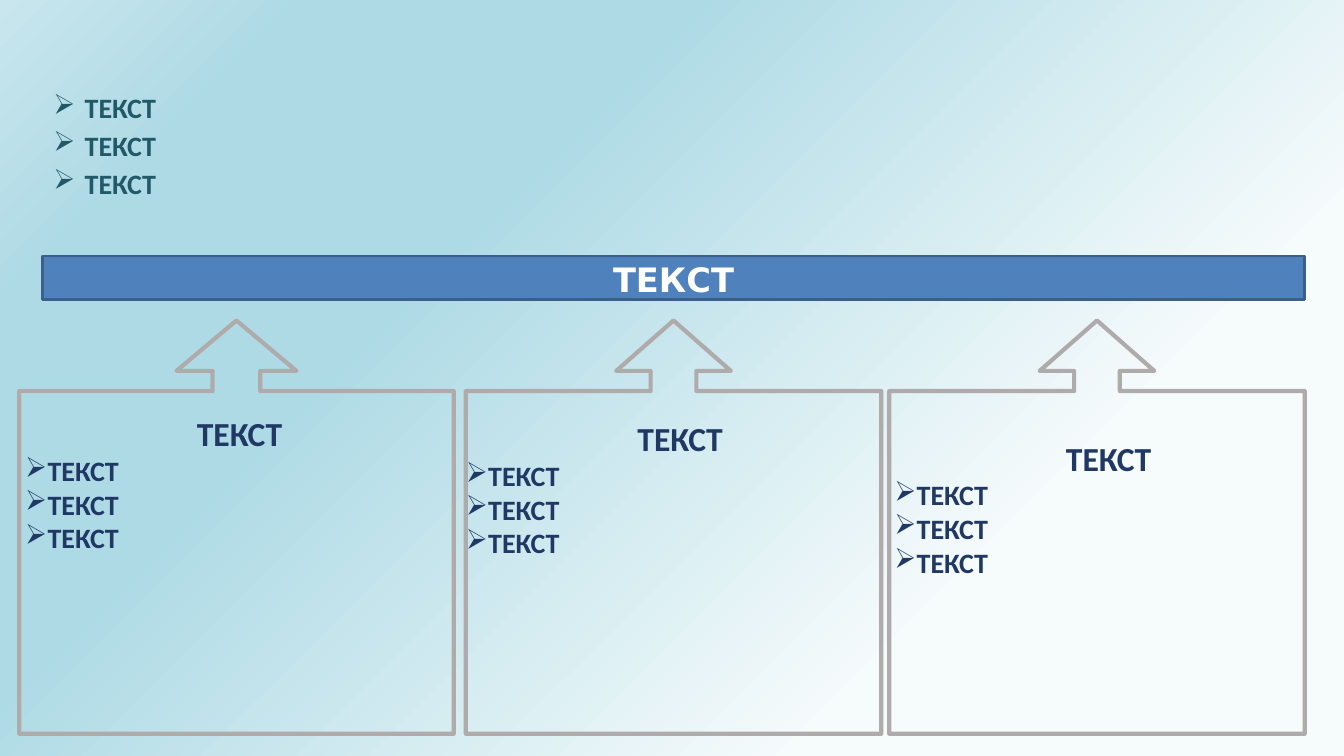
"""Build a slide with a list, a banner and three arrow callouts pointing up to it."""
from copy import deepcopy
from dataclasses import dataclass

from lxml import etree
from pptx import Presentation
from pptx.dml.color import RGBColor
from pptx.enum import shapes, text
from pptx.oxml import ns
from pptx.util import Inches, Pt


@dataclass(frozen=True)
class Theme:
    backdrop: tuple = ((26, "F6FBFC"), (67, "AEDAE5"), (85, "AEDAE5"), (100, "C9E6EE"))
    goals: str = "215968"
    banner: str = "4F81BD"
    banner_edge: str = "3A5F8C"
    banner_text: str = "FFFFFF"
    callout_edge: str = "AFABAB"
    callout_text: str = "203864"
    body_font: str = "Calibri"
    banner_font: str = "DejaVu Sans"
    heading_size: int = 24
    item_size: int = 20


theme = Theme()


def write(frame, lines, top_inset, font, size, color):
    """Fill a frame with bold lines and return its paragraphs."""
    frame.word_wrap = True
    frame.auto_size = text.MSO_AUTO_SIZE.SHAPE_TO_FIT_TEXT
    frame.vertical_anchor = text.MSO_ANCHOR.TOP
    frame.margin_left = frame.margin_right = frame.margin_bottom = 0
    frame.margin_top = Inches(top_inset)
    frame.text = "\n".join(lines)
    for paragraph in frame.paragraphs:
        run_font = paragraph.runs[0].font
        run_font.name = font
        run_font.size = Pt(size)
        run_font.bold = True
        run_font.color.rgb = RGBColor.from_string(color)
    return frame.paragraphs


def add_bullet(paragraph, margin=0, indent=0):
    """Give a paragraph an arrow bullet with a hanging indent."""
    properties = paragraph._p.get_or_add_pPr()
    properties.set("marL", str(Inches(margin)))
    properties.set("indent", str(Inches(indent)))
    etree.SubElement(properties, ns.qn("a:buChar")).set("char", "➢")


prs = Presentation()
prs.slide_width = Inches(13.33)
prs.slide_height = Inches(7.5)
slide = prs.slides.add_slide(prs.slide_layouts[6])

backdrop = slide.background.fill
backdrop.gradient()
backdrop.gradient_angle = 135
stop_list = slide._element.find(".//" + ns.qn("a:gsLst"))
for _ in range(len(theme.backdrop) - len(stop_list)):
    stop_list.append(deepcopy(stop_list[0]))
for stop, (position, color) in zip(backdrop.gradient_stops, theme.backdrop):
    stop.position = position / 100
    stop.color.rgb = RGBColor.from_string(color)

goals = slide.shapes.add_textbox(Inches(0.51), Inches(0.86), Inches(11.91), Inches(1.14))
for goal in write(goals.text_frame, ["ТЕКСТ"] * 3, 0.01,
                  theme.body_font, theme.item_size, theme.goals):
    goal.line_spacing = Pt(26.1)
    goal.space_before = Pt(1)
    add_bullet(goal, 0.33, -0.31)

banner = slide.shapes.add_shape(shapes.MSO_SHAPE.RECTANGLE, Inches(0.42), Inches(2.54),
                                Inches(12.52), Inches(0.43))
banner.shadow.inherit = False
banner.fill.solid()
banner.fill.fore_color.rgb = RGBColor.from_string(theme.banner)
banner.line.color.rgb = RGBColor.from_string(theme.banner_edge)
banner.line.width = Pt(2)
banner_title = write(banner.text_frame, ["ТЕКСТ"], 0.03,
                     theme.banner_font, theme.heading_size, theme.banner_text)[0]
banner_title.alignment = text.PP_ALIGN.CENTER
banner_title.space_before = Pt(2.1)

tip, head_base, box_top, box_bottom = 3.18, 3.68, 3.88, 7.28
callouts = [
    (0.19, 4.31, 0.25, 4.06),
    (4.62, 4.12, 4.62, 4.11),
    (8.82, 4.12, 8.87, 4.3),
]
for left, width, text_left, text_top in callouts:
    center, right = left + width / 2, left + width
    shaft, head = width * 0.055, width * 0.138
    outline = [
        (left, box_top), (center - shaft, box_top), (center - shaft, head_base),
        (center - head, head_base), (center, tip), (center + head, head_base),
        (center + shaft, head_base), (center + shaft, box_top),
        (right, box_top), (right, box_bottom), (left, box_bottom),
    ]
    corners = [(Inches(x), Inches(y)) for x, y in outline]
    builder = slide.shapes.build_freeform(*corners[0])
    builder.add_line_segments(corners[1:], close=True)
    callout = builder.convert_to_shape()
    callout.shadow.inherit = False
    callout.fill.background()
    callout.line.color.rgb = RGBColor.from_string(theme.callout_edge)
    callout.line.width = Pt(3)

for left, width, text_left, text_top in callouts:
    content = slide.shapes.add_textbox(Inches(text_left), Inches(text_top),
                                       Inches(4.25), Inches(1.45))
    heading, *items = write(content.text_frame, ["ТЕКСТ"] * 4, 0.04,
                            theme.body_font, theme.item_size, theme.callout_text)
    heading.alignment = text.PP_ALIGN.CENTER
    heading.runs[0].font.size = Pt(theme.heading_size)
    for item in items:
        add_bullet(item)

prs.save("out.pptx")
